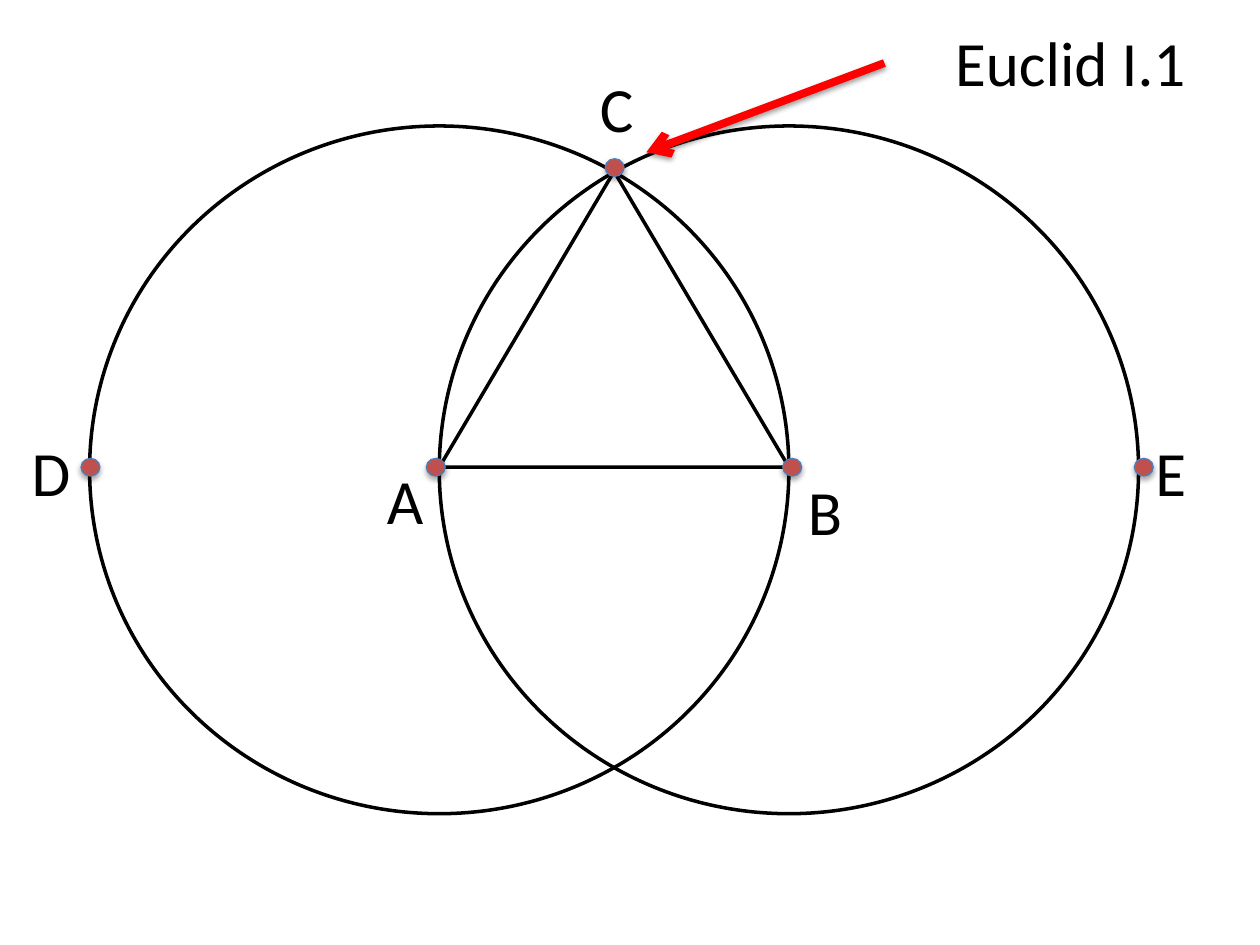
from lxml import etree
from pptx import Presentation
from pptx.dml.color import RGBColor
from pptx.enum import shapes, text
from pptx.oxml import ns
from pptx.util import Pt

BLACK, RED = "000000", "FF0000"
DOT_FILL, DOT_LINE = "C0504D", "4B7EBC"
DOT_W, DOT_H = 10.8, 10.1
LABEL_H = 51

# name: (dot centre, label left and top, label width), from the figure's corner
POINTS = {
    "A": ((197.8, 195), (162.8, 188), 36),
    "B": ((401.5, 195), (403.3, 194.4), 34.6),
    "C": ((300, 23.8), (284.5, -36), 33.8),
    "D": ((0.5, 195), (-40.2, 172), 36.7),
    "E": ((602.4, 195), (602, 172), 32.4),
}


def color(value):
    return RGBColor.from_string(value)


def set_line(sp, value, width):
    sp.line.color.rgb = color(value)
    sp.line.width = Pt(width)


def add_shadow(sp, distance, alpha):
    """Drop a soft black shadow straight down; call after the line is set."""
    effects = etree.SubElement(sp._element.spPr, ns.qn("a:effectLst"))
    shadow = etree.SubElement(
        effects, ns.qn("a:outerShdw"), blurRad=str(int(Pt(3.1))),
        dist=str(int(Pt(distance))), dir="5400000", rotWithShape="0")
    black = etree.SubElement(shadow, ns.qn("a:srgbClr"), val=BLACK)
    etree.SubElement(black, ns.qn("a:alpha"), val=str(alpha * 1000))


def add_outline(parent, kind, x, y, w, h, fill=None):
    sp = parent.shapes.add_shape(kind, Pt(x), Pt(y), Pt(w), Pt(h))
    sp.shadow.inherit = False
    if fill:
        sp.fill.solid()
        sp.fill.fore_color.rgb = color(fill)
    else:
        sp.fill.background()
    set_line(sp, BLACK, 2)


def add_dot(slide, x, y):
    sp = slide.shapes.add_shape(
        shapes.MSO_SHAPE.OVAL, Pt(x - DOT_W / 2), Pt(y - DOT_H / 2),
        Pt(DOT_W), Pt(DOT_H))
    sp.fill.solid()
    sp.fill.fore_color.rgb = color(DOT_FILL)
    set_line(sp, DOT_LINE, 0.75)
    add_shadow(sp, 1.8, 35)


def write(sp, words):
    tf = sp.text_frame
    tf.text = words
    tf.word_wrap = False
    tf.auto_size = text.MSO_AUTO_SIZE.SHAPE_TO_FIT_TEXT
    tf.vertical_anchor = text.MSO_ANCHOR.TOP
    p = tf.paragraphs[0]
    p.alignment = text.PP_ALIGN.LEFT
    p.font.name = "Calibri"
    p.font.size = Pt(36)
    p.font.color.rgb = color(BLACK)


def add_title(slide, x, y, w, h):
    title = slide.shapes.title
    title.left, title.top, title.width, title.height = map(Pt, (x, y, w, h))
    write(title, "Euclid I.1")


def add_construction(slide, x, y, w, h):
    """Two circles, each through the other's centre, and their triangle."""
    radius = w / 3
    group = slide.shapes.add_group_shape()
    oval = shapes.MSO_SHAPE.OVAL
    add_outline(group, oval, x, y, 2 * radius, h, "FFFFFF")
    add_outline(group, oval, x + radius, y, 2 * radius, h)
    add_outline(group, shapes.MSO_SHAPE.ISOSCELES_TRIANGLE,
                x + radius, y + 26, radius, 169)
    for name, (dot, label, label_w) in POINTS.items():
        box = slide.shapes.add_textbox(
            Pt(x + label[0]), Pt(y + label[1]), Pt(label_w), Pt(LABEL_H))
        write(box, name)
        add_dot(slide, x + dot[0], y + dot[1])


def add_arrow(slide, x1, y1, x2, y2):
    line = slide.shapes.add_connector(
        shapes.MSO_CONNECTOR.STRAIGHT, Pt(x1), Pt(y1), Pt(x2), Pt(y2))
    set_line(line, RED, 4.5)
    etree.SubElement(line.line._get_or_add_ln(), ns.qn("a:tailEnd"), type="arrow")
    add_shadow(line, 1.6, 38)


def main():
    prs = Presentation()
    prs.slide_width, prs.slide_height = Pt(720), Pt(540)
    slide = prs.slides.add_slide(prs.slide_layouts.get_by_name("Title Only"))
    add_title(slide, 538.6, 10, 147.6, LABEL_H)
    add_construction(slide, 51.2, 72, 599.4, 393)
    add_arrow(slide, 505.4, 36, 369.4, 87)
    prs.save("out.pptx")


if __name__ == "__main__":
    main()
